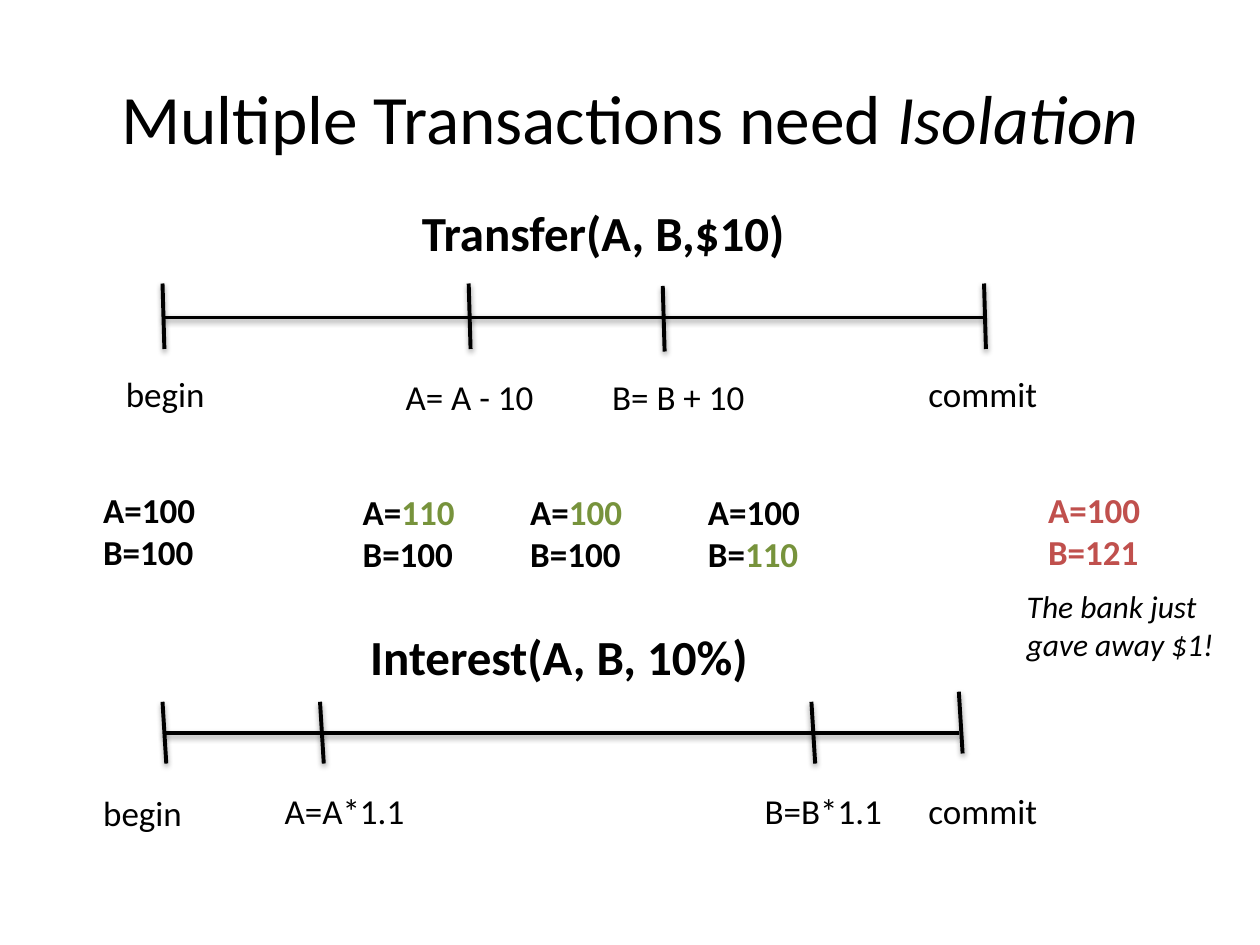
from dataclasses import dataclass

from lxml import etree
from pptx import Presentation
from pptx import util as u
from pptx.dml.color import RGBColor
from pptx.enum import shapes, text
from pptx.oxml.ns import qn


@dataclass(frozen=True)
class Theme:
    font: str = "Calibri"
    ink: str = "000000"
    changed: str = "77933C"
    wrong: str = "C0504D"
    title: float = 39.6
    heading: float = 28
    body: float = 20
    remark: float = 18
    rule: float = 2.25


THEME = Theme()


def add_text(slide, at, lines, size=THEME.body, color=THEME.ink, bold=False,
             italic=False, wrap=True, grow=True, centered=False):
    """Add a text box; each line is a list of (words, own format) runs."""
    box = slide.shapes.add_textbox(*(u.Inches(length) for length in at))
    frame = box.text_frame
    frame.word_wrap = wrap
    if grow:
        frame.auto_size = text.MSO_AUTO_SIZE.SHAPE_TO_FIT_TEXT
    if centered:
        frame.vertical_anchor = text.MSO_ANCHOR.MIDDLE
    for index, line in enumerate(lines):
        paragraph = frame.add_paragraph() if index else frame.paragraphs[0]
        paragraph.alignment = text.PP_ALIGN.CENTER if centered else text.PP_ALIGN.LEFT
        for words, own in line:
            run = paragraph.add_run()
            run.text = words
            run.font.name = THEME.font
            run.font.size = u.Pt(size)
            run.font.bold = bold
            run.font.italic = own.get("italic", italic)
            run.font.color.rgb = RGBColor.from_string(own.get("color", color))


def add_label(slide, at, words, **style):
    add_text(slide, at, [[(words, {})]], **style)


def add_line(slide, start, end):
    """Add a straight line with a soft shadow below it."""
    line = slide.shapes.add_connector(
        shapes.MSO_CONNECTOR.STRAIGHT,
        *(u.Inches(length) for length in (*start, *end)))
    line.line.color.rgb = RGBColor.from_string(THEME.ink)
    line.line.width = u.Pt(THEME.rule)
    effects = etree.SubElement(line._element.spPr, qn("a:effectLst"))
    shadow = etree.SubElement(effects, qn("a:outerShdw"), blurRad="40000",
                              dist="20000", dir="5400000", rotWithShape="0")
    shade = etree.SubElement(shadow, qn("a:srgbClr"), val=THEME.ink)
    etree.SubElement(shade, qn("a:alpha"), val="38000")


def add_timeline(slide, y, ticks, lean, height):
    """Add a time axis from the first to the last of its (x, top) ticks."""
    add_line(slide, (ticks[0][0], y), (ticks[-1][0], y))
    for x, top in ticks:
        add_line(slide, (x, top), (x + lean, top + height))


def add_balance(slide, left, top, a, b, changed=(), color=THEME.ink):
    """Add both account balances, marking the accounts just changed."""
    lines = [[(f"{account}=", {}),
              (amount, {"color": THEME.changed} if account in changed else {})]
             for account, amount in (("A", a), ("B", b))]
    add_text(slide, (left, top, 0.95, 0.77), lines, color=color, bold=True, wrap=False)


def main():
    deck = Presentation()
    deck.slide_width, deck.slide_height = u.Inches(10), u.Inches(7.5)
    slide = deck.slides.add_slide(deck.slide_layouts[6])

    # Title
    add_text(slide, (0.5, 0.3, 9, 1.25),
             [[("Multiple Transactions need ", {}), ("Isolation", {"italic": True})]],
             size=THEME.title, grow=False, centered=True)

    # Transfer transaction
    add_label(slide, (3.25, 1.56, 3.15, 0.57), "Transfer(A, B,$10)",
              size=THEME.heading, bold=True, wrap=False)
    add_timeline(slide, 2.52, [(1.29, 2.25), (3.72, 2.25), (5.26, 2.27), (7.81, 2.25)],
                 lean=0.015, height=0.52)

    # Interest transaction
    add_label(slide, (2.84, 4.92, 3.37, 0.57), "Interest(A, B, 10%)",
              size=THEME.heading, bold=True)
    add_timeline(slide, 5.82, [(1.29, 5.57), (2.54, 5.57), (6.44, 5.57), (7.61, 5.49)],
                 lean=0.03, height=0.49)

    # Steps under both timelines
    for left, top, width, step, wrap in (
            (0.9, 2.91, 1.89, "begin", False),
            (3.12, 2.93, 1.32, "A= A - 10", True),
            (4.76, 2.93, 1.32, "B= B + 10", True),
            (7.27, 2.91, 1.07, "commit", False),
            (0.72, 6.23, 1.89, "begin", False),
            (2.16, 6.22, 1.32, "A=A*1.1", True),
            (5.97, 6.22, 1.32, "B=B*1.1", True),
            (7.27, 6.22, 2.44, "commit", False)):
        add_label(slide, (left, top, width, 0.44), step, wrap=wrap)

    # Balances over time
    add_balance(slide, 0.72, 3.83, "100", "100")
    add_balance(slide, 2.78, 3.84, "110", "100", changed="A")
    add_balance(slide, 4.11, 3.84, "100", "100", changed="A")
    add_balance(slide, 5.52, 3.84, "100", "110", changed="B")
    add_balance(slide, 8.22, 3.83, "100", "121", color=THEME.wrong)

    # Remark on the final balance
    add_label(slide, (8.05, 4.61, 1.95, 0.71), "The bank just gave away $1!",
              size=THEME.remark, italic=True)

    deck.save("out.pptx")


if __name__ == "__main__":
    main()
